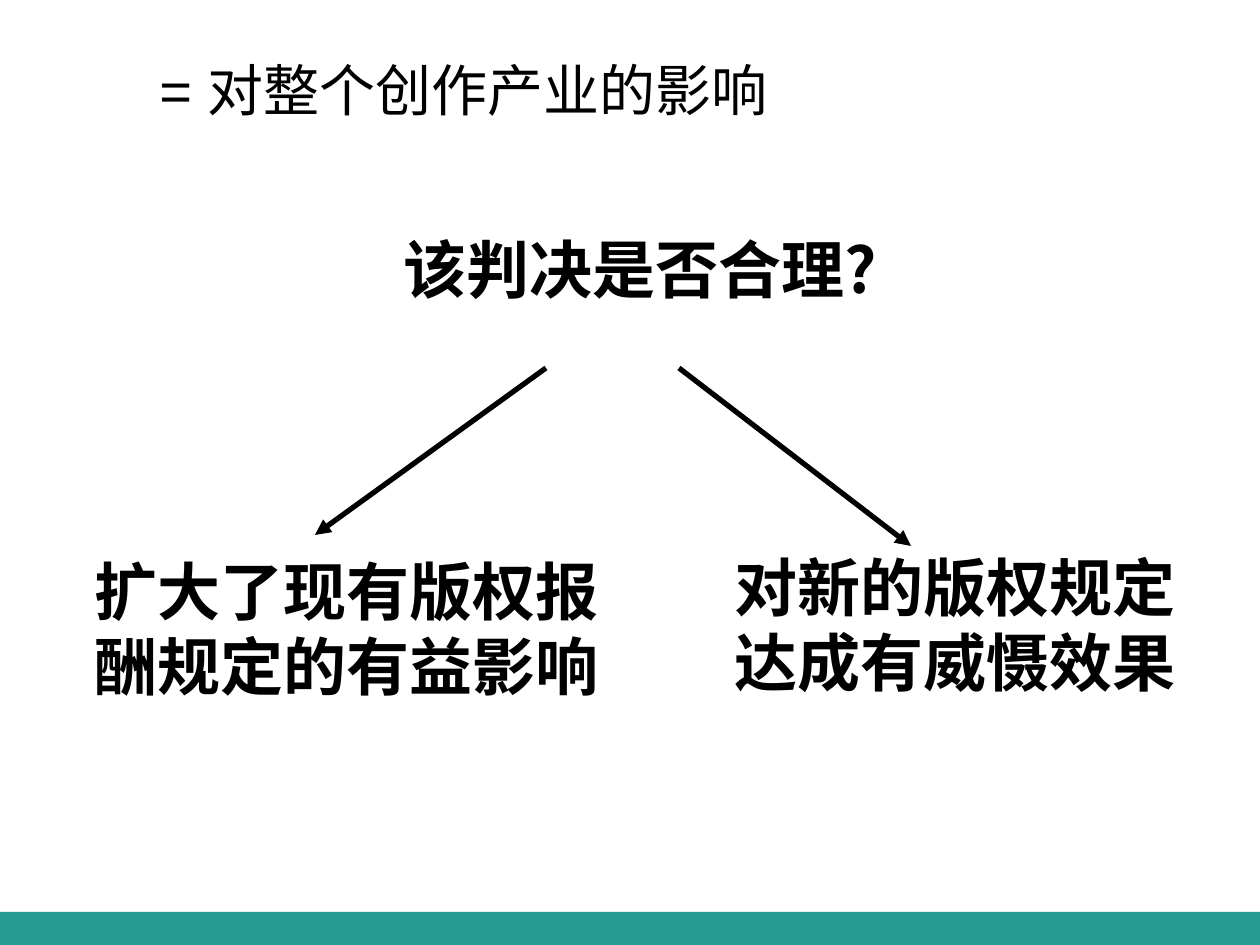
from pptx import Presentation, util as u
from pptx.dml.color import RGBColor
from pptx.enum import shapes, text
from pptx.oxml.ns import qn
from lxml import etree

PX = 914400 // 126
SANS = "Noto Sans CJK SC"

deck = Presentation()
deck.slide_width, deck.slide_height = u.Inches(10), u.Inches(7.5)
slide = deck.slides.add_slide(deck.slide_layouts[6])


def color(code):
    return RGBColor.from_string(code)


def write(box, runs, size=36, bold=True, align="CENTER", anchor="TOP", before=0):
    left, top, wide, high = [n * PX for n in box]
    frame = slide.shapes.add_textbox(left, top, wide, high).text_frame
    frame.word_wrap = True
    frame.vertical_anchor = text.MSO_ANCHOR[anchor]
    para = frame.paragraphs[0]
    para.alignment = text.PP_ALIGN[align]
    para.space_before = u.Pt(before)
    for words, face in runs:
        run = para.add_run()
        run.text = words
        font = run.font
        font.name, font.size, font.bold = face, u.Pt(size), bold
        font.color.rgb = color("000000")
        east = etree.SubElement(run._r.get_or_add_rPr(), qn("a:ea"))
        east.set("typeface", face)


# Footer bar
bar = slide.shapes.add_shape(shapes.MSO_SHAPE.RECTANGLE, 0, 912 * PX, 1260 * PX, 35 * PX)
bar.shadow.inherit = False
bar.fill.solid()
bar.fill.fore_color.rgb = color("259C92")
bar.line.fill.background()

# Central question
write((263, 179, 754, 179), [("该判决是否合理?", SANS)], anchor="MIDDLE")

# Arrows to the two answers
for ends in [(546, 368, 315, 535), (679, 368, 911, 546)]:
    arrow = slide.shapes.add_connector(shapes.MSO_CONNECTOR.STRAIGHT, *[n * PX for n in ends])
    arrow.line.width = u.Pt(3)
    arrow.line.color.rgb = color("000000")
    tip = etree.SubElement(arrow.line._get_or_add_ln(), qn("a:tailEnd"))
    tip.set("type", "triangle")
    etree.SubElement(arrow._element.spPr, qn("a:effectLst"))

# Answers
for box, words in [
    ((74, 546, 546, 169), "扩大了现有版权报酬规定的有益影响"),
    ((699, 542, 512, 165), "对新的版权规定达成有威慑效果"),
]:
    write(box, [(words, SANS)], before=18)

# Heading
write((147, 42, 930, 94), [("= ", "Arial"), ("对整个创作产业的影响", SANS)],
      size=32, bold=False, align="LEFT", anchor="MIDDLE")

deck.save("out.pptx")
